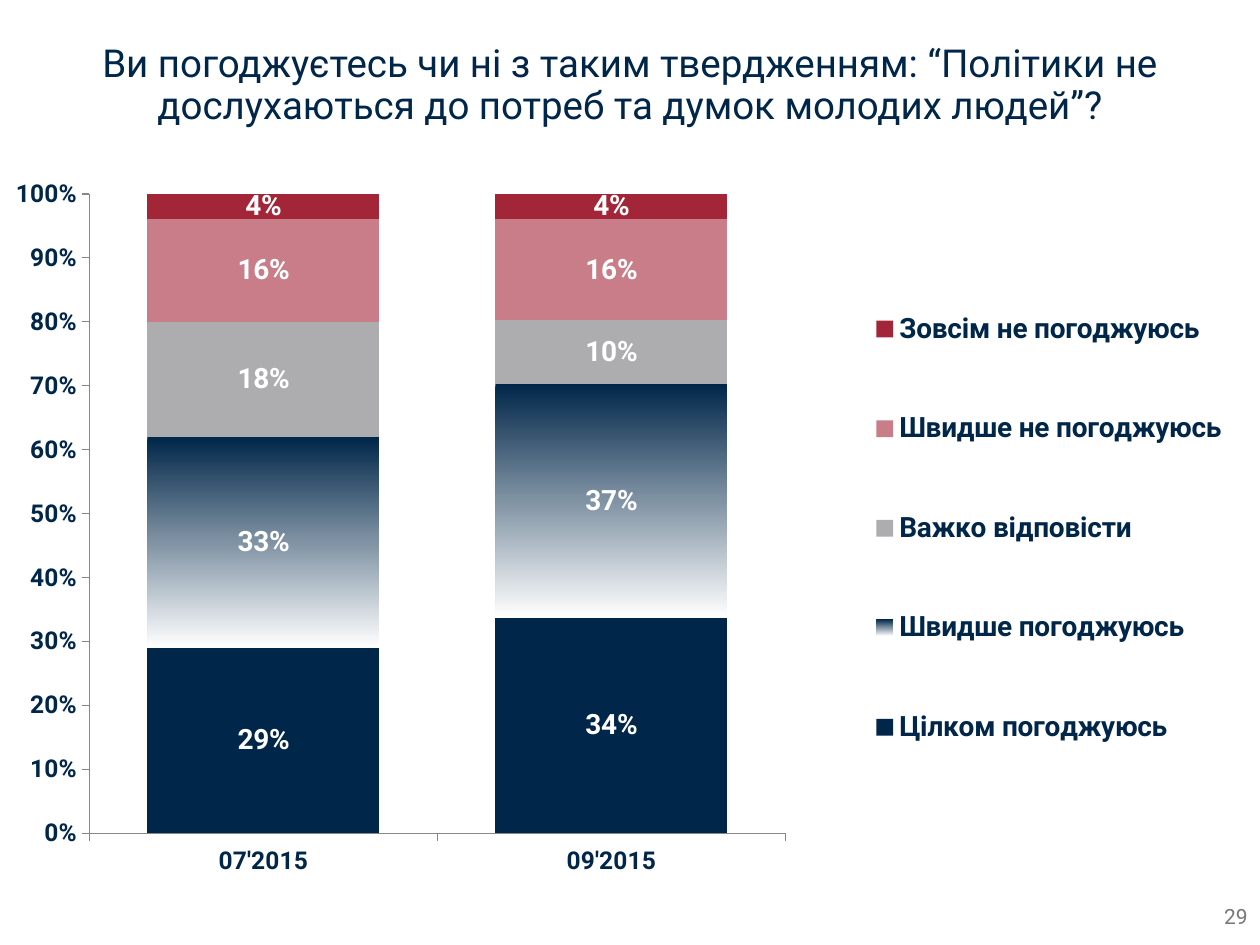
from lxml import etree
from pptx import Presentation
from pptx import util as u
from pptx.chart.data import CategoryChartData
from pptx.dml.color import RGBColor
from pptx.enum import chart as ch, text
from pptx.oxml import ns, parse_xml

NAVY = RGBColor(0x00, 0x26, 0x49)
STEEL = RGBColor(0x80, 0x93, 0xA4)
WHITE = RGBColor(0xFF, 0xFF, 0xFF)
SILVER = RGBColor(0xAD, 0xAD, 0xB0)
ROSE = RGBColor(0xC8, 0x7D, 0x88)
CRIMSON = RGBColor(0xA3, 0x26, 0x38)
GREY = RGBColor(0x77, 0x78, 0x7B)
AXIS_GREY = RGBColor(0x87, 0x87, 0x87)

WAVES = ["07'2015", "09'2015"]
# A tuple of colours is a gradient from top to bottom.
ANSWERS = [
    ("Цілком погоджуюсь", (0.29, 0.34), NAVY),
    ("Швидше погоджуюсь", (0.33, 0.37), (NAVY, STEEL, WHITE)),
    ("Важко відповісти", (0.18, 0.10), SILVER),
    ("Швидше не погоджуюсь", (0.16, 0.16), ROSE),
    ("Зовсім не погоджуюсь", (0.04, 0.04), CRIMSON),
]


class Deck:
    font = "Roboto"

    def __init__(self, prs):
        self.s = prs.slides.add_slide(prs.slide_layouts[6])

    def style(self, font, size, color, bold=False):
        font.name, font.size, font.bold = self.font, u.Pt(size), bold
        font.color.rgb = color

    def text(self, box, words, size, color, align, spacing=1.0):
        tf = self.s.shapes.add_textbox(*map(u.Pt, box)).text_frame
        tf.word_wrap = True
        tf.vertical_anchor = text.MSO_ANCHOR.MIDDLE
        tf.text = words
        p = tf.paragraphs[0]
        p.alignment, p.line_spacing = align, spacing
        self.style(p.runs[0].font, size, color)

    def stacked_chart(self, box, cats, series):
        data = CategoryChartData(number_format="0%")
        data.categories = cats
        for name, values, _ in series:
            data.add_series(name, values)
        chart = self.s.shapes.add_chart(
            ch.XL_CHART_TYPE.COLUMN_STACKED_100, *map(u.Pt, box), data).chart
        chart.font.name, chart.font.size = self.font, u.Pt(18)
        chart.has_title = False
        plot = chart.plots[0]
        plot.gap_width, plot.overlap, plot.vary_by_categories = 50, 100, False
        for one, (_, _, color) in zip(plot.series, series):
            self.fill(one.format.fill, one, color)
            labels = one.data_labels
            labels.show_value = True
            labels.number_format, labels.number_format_is_linked = "0%", False
            self.style(labels.font, 16, WHITE, True)
        for axis in (chart.category_axis, chart.value_axis):
            axis.has_major_gridlines = False
            axis.major_tick_mark = ch.XL_TICK_MARK.OUTSIDE
            axis.format.line.color.rgb = AXIS_GREY
            axis.format.line.width = u.Pt(0.75)
            self.style(axis.tick_labels.font, 14, NAVY, True)
        axis.minimum_scale, axis.maximum_scale, axis.major_unit = 0, 1, 0.1
        axis.tick_labels.number_format = "0%"
        axis.tick_labels.number_format_is_linked = False
        chart.has_legend = True
        chart.legend.position = ch.XL_LEGEND_POSITION.RIGHT
        chart.legend.include_in_layout = False
        self.style(chart.legend.font, 16, NAVY, True)
        return chart

    def fill(self, fill, series, color):
        if isinstance(color, RGBColor):
            fill.solid()
            fill.fore_color.rgb = color
            return
        fill.gradient()
        fill.gradient_angle = 270
        stops = next(series.format._element.iter(ns.qn("a:gsLst"))) \
            if hasattr(series.format, "_element") \
            else next(series._element.iter(ns.qn("a:gsLst")))
        for old in list(stops):
            stops.remove(old)
        for i, c in enumerate(color):
            stop = etree.SubElement(stops, ns.qn("a:gs"),
                                    pos=str(100000 * i // (len(color) - 1)))
            etree.SubElement(stop, ns.qn("a:srgbClr"), val=str(c))

    def place(self, part, x, y, w, h, inner=False):
        """Lay out a plot area or legend by fractions of the chart."""
        for old in part.findall(ns.qn("c:layout")):
            part.remove(old)
        target = '<c:layoutTarget val="inner"/>' if inner else ""
        sizes = "".join(f'<c:{k} val="{v}"/>' for k, v in zip("xywh", (x, y, w, h)))
        layout = parse_xml(
            f'<c:layout {ns.nsdecls("c")}><c:manualLayout>{target}'
            '<c:xMode val="edge"/><c:yMode val="edge"/>'
            f'{sizes}</c:manualLayout></c:layout>')
        before = part.find(ns.qn("c:legendPos"))
        part.insert(0 if before is None else part.index(before) + 1, layout)


def main():
    prs = Presentation()
    prs.slide_width, prs.slide_height = u.Pt(720), u.Pt(540)
    deck = Deck(prs)
    deck.text((22, 37, 676, 24),
              "Ви погоджуєтесь чи ні з таким твердженням: “Політики не "
              "дослухаються до потреб та думок молодих людей”?",
              22, NAVY, text.PP_ALIGN.CENTER, 0.9)
    deck.text((558, 509, 162, 29), "29", 12, GREY, text.PP_ALIGN.RIGHT)
    chart = deck.stacked_chart((9, 94, 698, 420), WAVES, ANSWERS)
    plot_area = next(chart._chartSpace.iter(ns.qn("c:plotArea")))
    deck.place(plot_area, 0.06, 0.04, 0.57, 0.87, inner=True)
    deck.place(chart.legend._element, 0.71, 0.11, 0.29, 0.77)
    prs.save("out.pptx")


if __name__ == "__main__":
    main()
